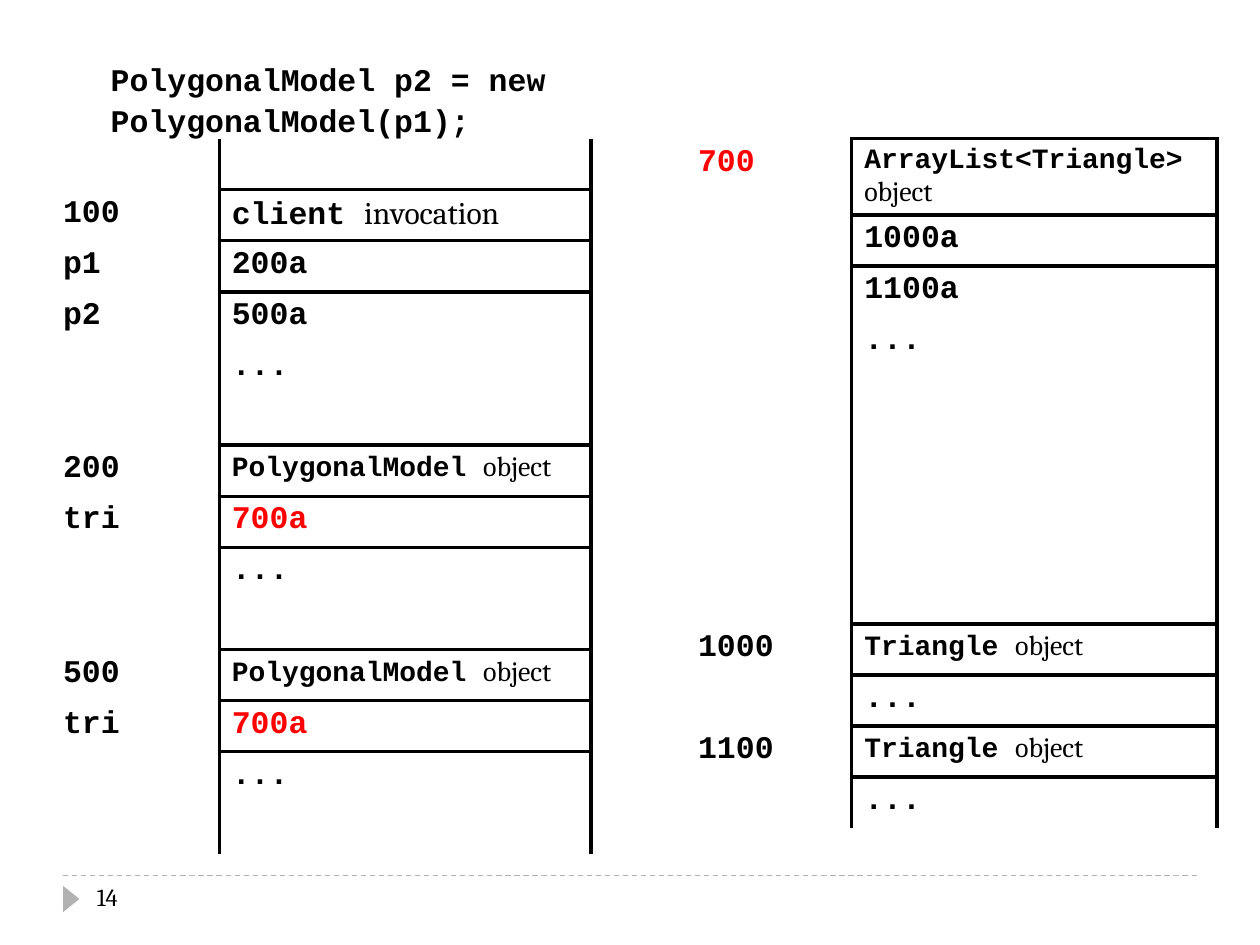
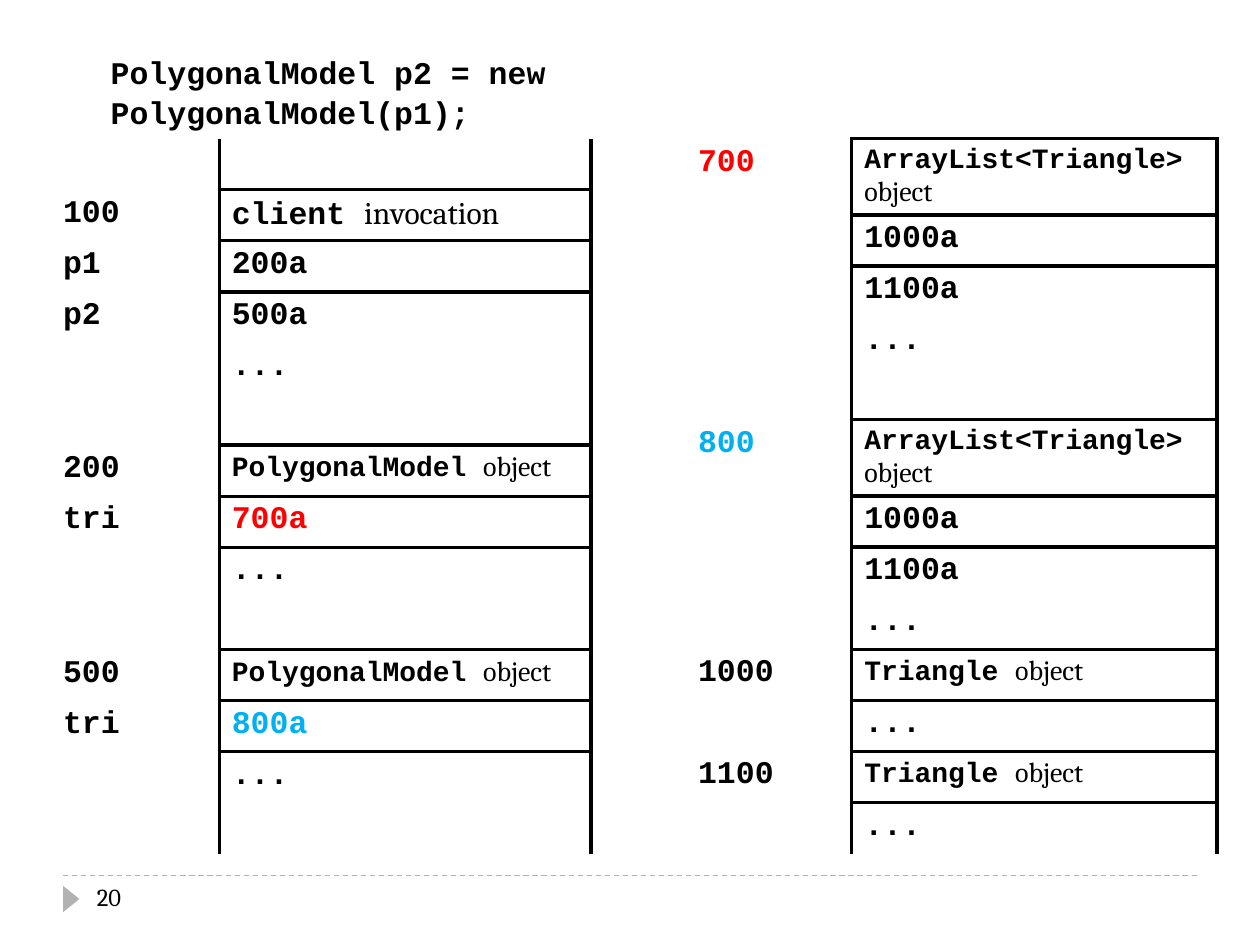
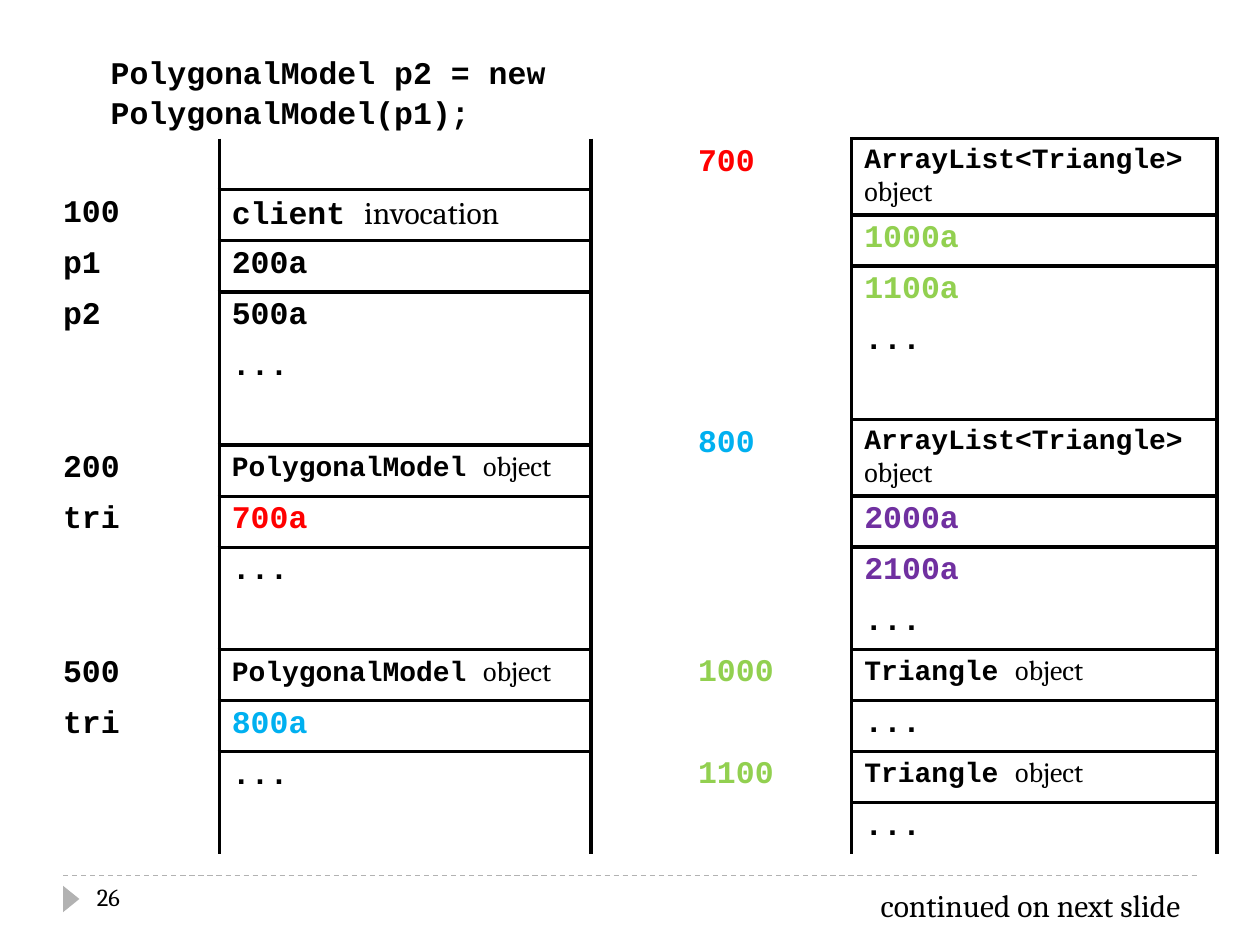
from dataclasses import dataclass

import pptx
import pptx.dml.color
import pptx.enum.dml
import pptx.enum.shapes
import pptx.enum.text
import pptx.oxml
import pptx.oxml.ns
import pptx.util
from pptx.util import Inches


@dataclass(frozen=True)
class Theme:
    code_font: str = "Courier New"
    text_font: str = "Cambria"
    body_size: int = 18
    object_size: int = 16
    number_size: int = 14
    border_width: float = 2.25
    black: str = "000000"
    grey: str = "B2B2B2"
    red: str = "FF0000"
    blue: str = "00B0F0"
    green: str = "92D050"
    purple: str = "7030A0"


theme = Theme()
NO_STYLE = "{2D5ABB26-0587-4C30-8999-92F81FD0307C}"
ROW_HEIGHT = Inches(5.68 / 14)
TOP = Inches(1.1)


def format_run(run, font, size, color=theme.black):
    run.font.name = font
    run.font.size = pptx.util.Pt(size)
    run.font.bold = font == theme.code_font
    run.font.color.rgb = pptx.dml.color.RGBColor.from_string(color)


def add_memory_table(slide, left, column_widths, rows, address_colors):
    """Draw (label, value) rows; a value of two words heads a boxed block."""
    table = slide.shapes.add_table(
        len(rows), 2, left, TOP, sum(column_widths), ROW_HEIGHT * len(rows)
    ).table
    table.first_row = table.horz_banding = False
    table._tbl.tblPr.find(pptx.oxml.ns.qn("a:tableStyleId")).text = NO_STYLE
    for column, width in zip(table.columns, column_widths):
        column.width = width

    is_header = [" " in value for _, value in rows]
    for index, row in enumerate(rows):
        table.rows[index].height = ROW_HEIGHT
        sides = ["L", "R"]
        if is_header[index] or (index > 0 and is_header[index - 1]):
            sides.append("T")
        if is_header[index] or (index + 1 < len(rows) and is_header[index + 1]):
            sides.append("B")
        cell_properties = table.cell(index, 1)._tc.get_or_add_tcPr()
        for side in sides:
            cell_properties.append(pptx.oxml.parse_xml(
                f'<a:ln{side} {pptx.oxml.ns.nsdecls("a")} w="{pptx.util.Pt(theme.border_width)}">'
                f'<a:solidFill><a:srgbClr val="{theme.black}"/></a:solidFill></a:ln{side}>'
            ))

        for column_index, text in enumerate(row):
            cell = table.cell(index, column_index)
            cell.fill.background()
            if not text:
                continue
            paragraph = cell.text_frame.paragraphs[0]
            code, space, noun = text.partition(" ")
            size = theme.object_size if noun == "object" else theme.body_size
            color = address_colors.get(code.rstrip("a"), theme.black)
            paragraph.text = code + space
            format_run(paragraph.runs[0], theme.code_font, size, color)
            if noun:
                noun_run = paragraph.add_run()
                noun_run.text = noun
                format_run(noun_run, theme.text_font, size)


def stack_rows(second_list):
    return [
        ("", ""),
        ("100", "client invocation"),
        ("p1", "200a"),
        ("p2", "500a"),
        ("", "..."),
        ("", ""),
        ("200", "PolygonalModel object"),
        ("tri", "700a"),
        ("", "..."),
        ("", ""),
        ("500", "PolygonalModel object"),
        ("tri", second_list),
        ("", "..."),
        ("", ""),
    ]


def list_rows(address, *triangles):
    return [(address, "ArrayList<Triangle> object"),
            *[("", triangle) for triangle in triangles], ("", "...")]


first_list = list_rows("700", "1000a", "1100a")
triangle_rows = [
    ("1000", "Triangle object"), ("", "..."),
    ("1100", "Triangle object"), ("", "..."),
]
empty_row = ("", "")
list_colors = {"700": theme.red, "800": theme.blue}
triangle_colors = {
    "1000": theme.green, "1100": theme.green,
    "2000": theme.purple, "2100": theme.purple,
}

# number, title top, second model's list, heap rows, address colours, closing note
slide_data = [
    (14, 0.41, "700a", first_list + [empty_row] * 5 + triangle_rows, list_colors, ""),
    (20, 0.35, "800a",
     first_list + [empty_row] + list_rows("800", "1000a", "1100a") + triangle_rows,
     list_colors, ""),
    (26, 0.35, "800a",
     first_list + [empty_row] + list_rows("800", "2000a", "2100a") + triangle_rows,
     list_colors | triangle_colors, "continued on next slide"),
]

presentation = pptx.Presentation()
presentation.slide_width = Inches(10)
presentation.slide_height = Inches(7.5)
grey = pptx.dml.color.RGBColor.from_string(theme.grey)

for number, title_top, second_list, heap_rows, address_colors, note in slide_data:
    slide = presentation.slides.add_slide(presentation.slide_layouts[6])

    footer_line = slide.shapes.add_connector(
        pptx.enum.shapes.MSO_CONNECTOR.STRAIGHT,
        Inches(0.5), Inches(6.95), Inches(9.5), Inches(6.95))
    footer_line.line.color.rgb = grey
    footer_line.line.width = pptx.util.Pt(0.75)
    footer_line.line.dash_style = pptx.enum.dml.MSO_LINE.DASH
    footer_line._element.spPr.append(pptx.oxml.parse_xml(
        f'<a:effectLst {pptx.oxml.ns.nsdecls("a")}/>'))

    marker = slide.shapes.add_shape(
        pptx.enum.shapes.MSO_SHAPE.ISOSCELES_TRIANGLE,
        Inches(0.46), Inches(7.07), Inches(0.21), Inches(0.13))
    marker.rotation = 90
    marker.shadow.inherit = False
    marker.fill.solid()
    marker.fill.fore_color.rgb = grey
    marker.line.fill.background()

    add_memory_table(slide, Inches(5.44), (Inches(1.32), Inches(2.9)),
                     heap_rows, address_colors)
    add_memory_table(slide, Inches(0.4), (Inches(1.34), Inches(2.95)),
                     stack_rows(second_list), address_colors)

    text_boxes = [
        (str(number), 0.67, 6.95, 2.17, theme.text_font, theme.number_size),
        ("PolygonalModel p2 = new PolygonalModel(p1);",
         0.78, title_top, 6.39, theme.code_font, theme.body_size),
    ]
    if note:
        text_boxes.append((note, 6.89, 6.98, 2.78, theme.text_font, theme.body_size))
    for text, left, top, width, font, size in text_boxes:
        text_frame = slide.shapes.add_textbox(
            Inches(left), Inches(top), Inches(width), Inches(0.4)).text_frame
        text_frame.word_wrap = True
        text_frame.auto_size = pptx.enum.text.MSO_AUTO_SIZE.SHAPE_TO_FIT_TEXT
        text_frame.text = text
        paragraph = text_frame.paragraphs[0]
        format_run(paragraph.runs[0], font, size)
        if font == theme.code_font:
            paragraph.line_spacing = 1.07

presentation.save("out.pptx")
